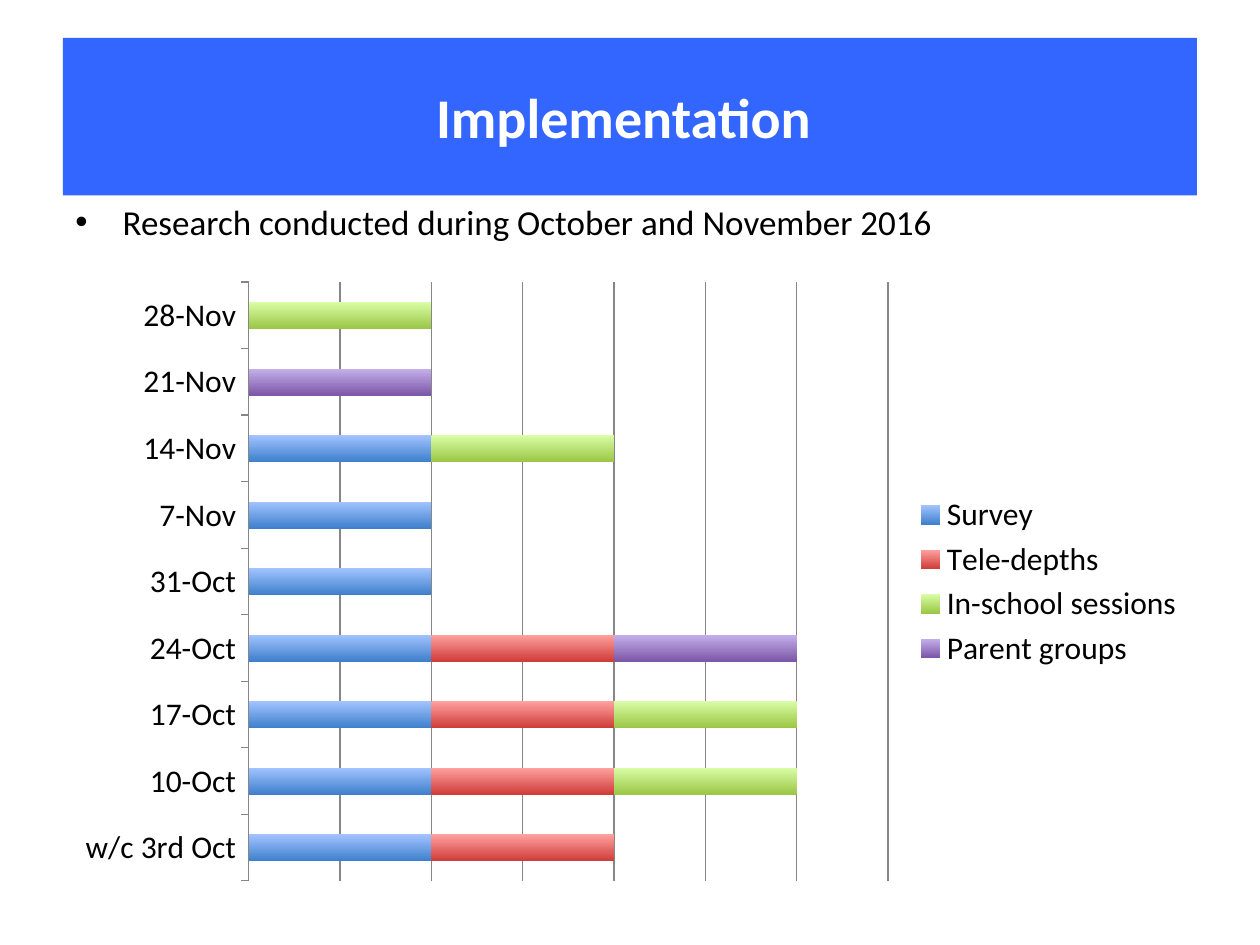
from dataclasses import dataclass
from typing import Any, Optional

from lxml import etree
from pptx import Presentation
from pptx import util as u
from pptx.chart.data import CategoryChartData
from pptx.dml.color import RGBColor
from pptx.enum import chart as charts, shapes, text
from pptx.oxml import ns

WHITE = RGBColor(0xFF, 0xFF, 0xFF)
BLACK = RGBColor(0, 0, 0)
BANNER_BLUE = RGBColor(0x33, 0x66, 0xFF)
AXIS_GREY = RGBColor(0x86, 0x86, 0x86)
FONT = "Calibri"
LEFT, WIDTH = u.Pt(36), u.Pt(648)
WEEKS = ["w/c 3rd Oct", "10-Oct", "17-Oct", "24-Oct", "31-Oct",
         "7-Nov", "14-Nov", "21-Nov", "28-Nov"]


@dataclass(frozen=True)
class Activity:
    name: str
    weeks: tuple[int, ...]
    top: RGBColor
    bottom: RGBColor

    def values(self) -> list[Optional[int]]:
        """Return 100 for each active week and a gap for the others."""
        return [100 if week in self.weeks else None for week in range(len(WEEKS))]


ACTIVITIES = [
    Activity("Survey", (0, 1, 2, 3, 4, 5, 6),
             RGBColor(0xA3, 0xC4, 0xFF), RGBColor(0x3F, 0x80, 0xCD)),
    Activity("Tele-depths", (0, 1, 2, 3),
             RGBColor(0xFF, 0xA2, 0xA0), RGBColor(0xCF, 0x3D, 0x3A)),
    Activity("In-school sessions", (1, 2, 6, 8),
             RGBColor(0xDA, 0xFD, 0xA6), RGBColor(0x9C, 0xC7, 0x46)),
    Activity("Parent groups ", (3, 7),
             RGBColor(0xC5, 0xB1, 0xEC), RGBColor(0x7D, 0x57, 0xA8)),
]


def apply_format(target: Any, values: dict[str, Any]) -> None:
    for name, value in values.items():
        setattr(target, name, value)


def set_font(font: Any, size: int, color: RGBColor, bold: bool = False) -> None:
    apply_format(font, {"name": FONT, "size": u.Pt(size), "bold": bold})
    font.color.rgb = color


def add_title(page: Any) -> None:
    banner = page.shapes.add_shape(
        shapes.MSO_SHAPE.RECTANGLE, LEFT, u.Pt(21.6), WIDTH, u.Pt(90))
    banner.shadow.inherit = False
    banner.fill.solid()
    banner.fill.fore_color.rgb = BANNER_BLUE
    banner.line.fill.background()
    banner.text_frame.vertical_anchor = text.MSO_ANCHOR.MIDDLE
    para = banner.text_frame.paragraphs[0]
    para.alignment = text.PP_ALIGN.CENTER
    span = para.add_run()
    span.text = "Implementation "
    set_font(span.font, 32, WHITE, bold=True)


def add_bullet(page: Any) -> None:
    box = page.shapes.add_textbox(LEFT, u.Pt(110.9), WIDTH, u.Pt(356.4))
    box.text_frame.word_wrap = True
    para = box.text_frame.paragraphs[0]
    span = para.add_run()
    span.text = "Research conducted during October and November 2016"
    set_font(span.font, 20, BLACK)
    props = para._p.get_or_add_pPr()
    props.set("marL", str(u.Pt(27)))
    props.set("indent", str(-u.Pt(27)))
    spacing = etree.SubElement(props, ns.qn("a:spcBef"))
    etree.SubElement(spacing, ns.qn("a:spcPct"), val="20000")
    etree.SubElement(props, ns.qn("a:buFont"), typeface="Arial")
    etree.SubElement(props, ns.qn("a:buChar"), char="•")


def style_axes(chart: Any) -> None:
    weeks, amounts = chart.category_axis, chart.value_axis
    apply_format(weeks, {
        "major_tick_mark": charts.XL_TICK_MARK.OUTSIDE,
        "minor_tick_mark": charts.XL_TICK_MARK.NONE,
        "has_major_gridlines": False,
    })
    apply_format(amounts, {
        "minimum_scale": 0, "maximum_scale": 350, "major_unit": 50,
        "has_major_gridlines": True, "visible": False,
    })
    for line in (weeks.format.line, amounts.major_gridlines.format.line):
        line.color.rgb = AXIS_GREY
        line.width = u.Pt(0.75)


def add_schedule(page: Any) -> None:
    data = CategoryChartData()
    data.categories = WEEKS
    for activity in ACTIVITIES:
        data.add_series(activity.name, activity.values())
    chart = page.shapes.add_chart(
        charts.XL_CHART_TYPE.BAR_STACKED, LEFT, u.Pt(154.1), WIDTH, u.Pt(356.4),
        data).chart
    set_font(chart.font, 18, BLACK)
    apply_format(chart, {"has_title": False, "has_legend": True})
    apply_format(chart.legend, {
        "position": charts.XL_LEGEND_POSITION.RIGHT, "include_in_layout": False})
    plot = chart.plots[0]
    apply_format(plot, {"gap_width": 150, "overlap": 100, "vary_by_categories": False})
    style_axes(chart)
    for series, activity in zip(plot.series, ACTIVITIES):
        fill = series.format.fill
        fill.gradient()
        fill.gradient_angle = 270
        for stop, color in zip(fill.gradient_stops, (activity.top, activity.bottom)):
            stop.color.rgb = color


def main() -> None:
    deck = Presentation()
    apply_format(deck, {"slide_width": u.Pt(720), "slide_height": u.Pt(540)})
    page = deck.slides.add_slide(deck.slide_layouts[6])
    add_title(page)
    add_bullet(page)
    add_schedule(page)
    deck.save("out.pptx")


if __name__ == "__main__":
    main()
